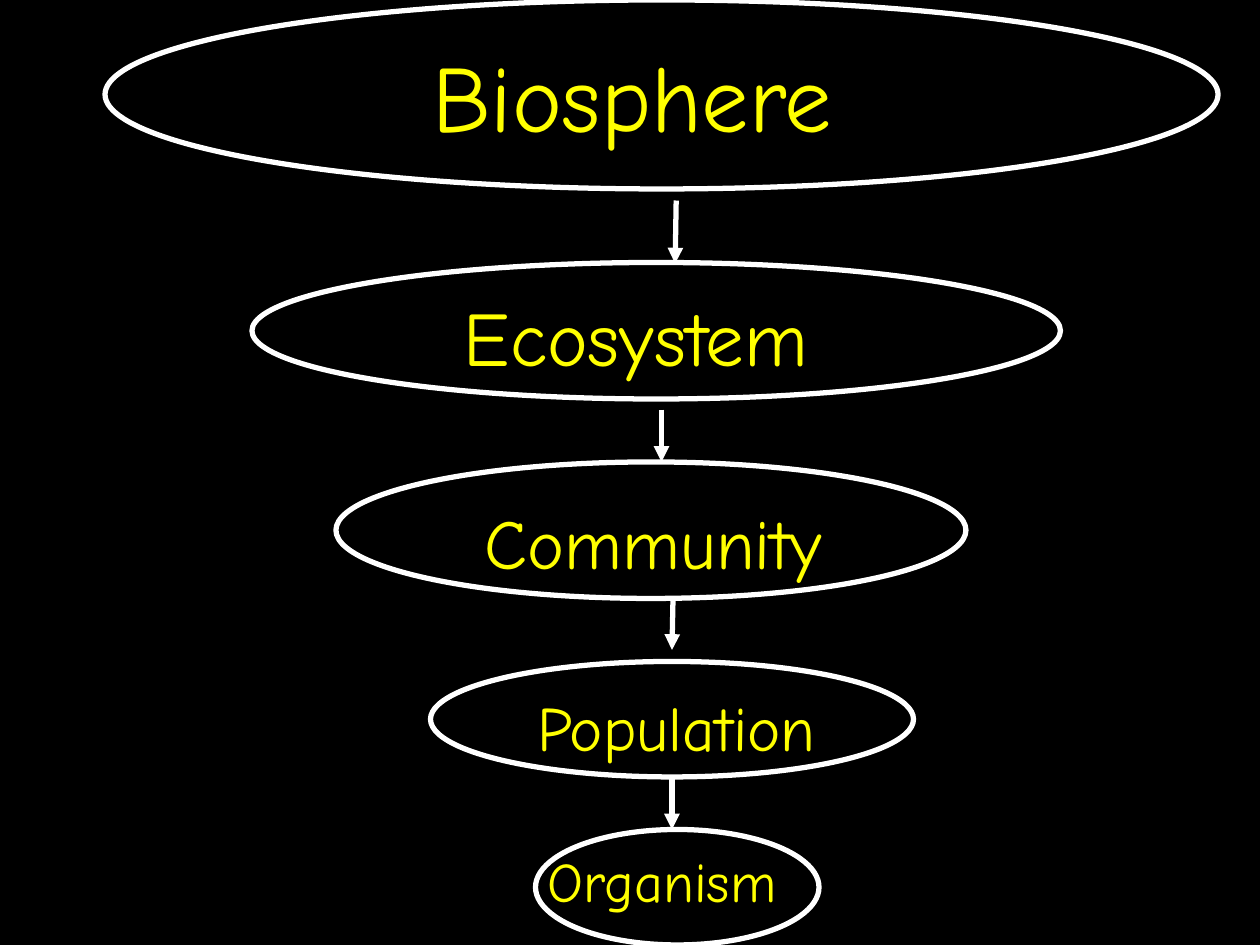
"""Build a slide showing the levels of life from biosphere down to organism."""
from typing import Any, NamedTuple

from lxml import etree
from pptx import Presentation
from pptx import util as u
from pptx.dml.color import RGBColor
from pptx.enum import shapes, text
from pptx.oxml.ns import qn

EMU_PER_PX = 7620
BACKGROUND, OUTLINE, LABEL = "000000", "FFFFFF", "FFFF00"


class Box(NamedTuple):
    left: int
    top: int
    width: int
    height: int


class Level(NamedTuple):
    name: str
    size: int
    ring: Box
    label: Box


class Arrow(NamedTuple):
    x1: int
    y1: int
    x2: int
    y2: int


LEVELS = [
    Level("Biosphere", 54, Box(100, 0, 1060, 180), Box(400, 30, 480, 120)),
    Level("Ecosystem", 44, Box(240, 250, 770, 130), Box(430, 270, 430, 100)),
    Level("Community", 40, Box(320, 440, 600, 130), Box(450, 470, 390, 92)),
    Level("Population", 36, Box(410, 630, 460, 110), Box(500, 650, 310, 84)),
    Level("Organism", 32, Box(510, 790, 270, 110), Box(510, 800, 330, 76)),
]
ARROWS = [
    Arrow(644, 191, 643, 251),
    Arrow(630, 390, 630, 440),
    Arrow(641, 570, 640, 619),
    Arrow(640, 740, 640, 790),
]


def px(length: int) -> u.Emu:
    return u.Emu(length * EMU_PER_PX)


def colour(value: str) -> RGBColor:
    return RGBColor.from_string(value)


def apply(target: Any, values: dict[str, Any]) -> None:
    for name, value in values.items():
        setattr(target, name, value)


def style_outline(line: Any) -> None:
    line.color.rgb = colour(OUTLINE)
    line.width = u.Pt(3)


def draw_ring(slide: Any, box: Box) -> None:
    ring = slide.shapes.add_shape(shapes.MSO_SHAPE.OVAL, *map(px, box))
    ring.shadow.inherit = False
    ring.fill.background()
    style_outline(ring.line)


def draw_label(slide: Any, level: Level) -> None:
    frame = slide.shapes.add_textbox(*map(px, level.label)).text_frame
    apply(frame, {"word_wrap": True, "vertical_anchor": text.MSO_ANCHOR.TOP})
    run = frame.paragraphs[0].add_run()
    run.text = level.name
    apply(run.font, {"name": "Comic Neue", "size": u.Pt(level.size)})
    run.font.color.rgb = colour(LABEL)


def draw_arrow(slide: Any, arrow: Arrow) -> None:
    link = slide.shapes.add_connector(shapes.MSO_CONNECTOR.STRAIGHT, *map(px, arrow))
    style_outline(link.line)
    properties = link._element.spPr
    etree.SubElement(properties.find(qn("a:ln")), qn("a:tailEnd"), type="triangle")
    etree.SubElement(properties, qn("a:effectLst"))


def main() -> None:
    deck = Presentation()
    apply(deck, {"slide_width": px(1200), "slide_height": px(900)})
    slide = deck.slides.add_slide(deck.slide_layouts[6])
    backdrop = slide.background.fill
    backdrop.solid()
    backdrop.fore_color.rgb = colour(BACKGROUND)
    for level in LEVELS:
        draw_ring(slide, level.ring)
        draw_label(slide, level)
    for arrow in ARROWS:
        draw_arrow(slide, arrow)
    deck.save("out.pptx")


if __name__ == "__main__":
    main()
